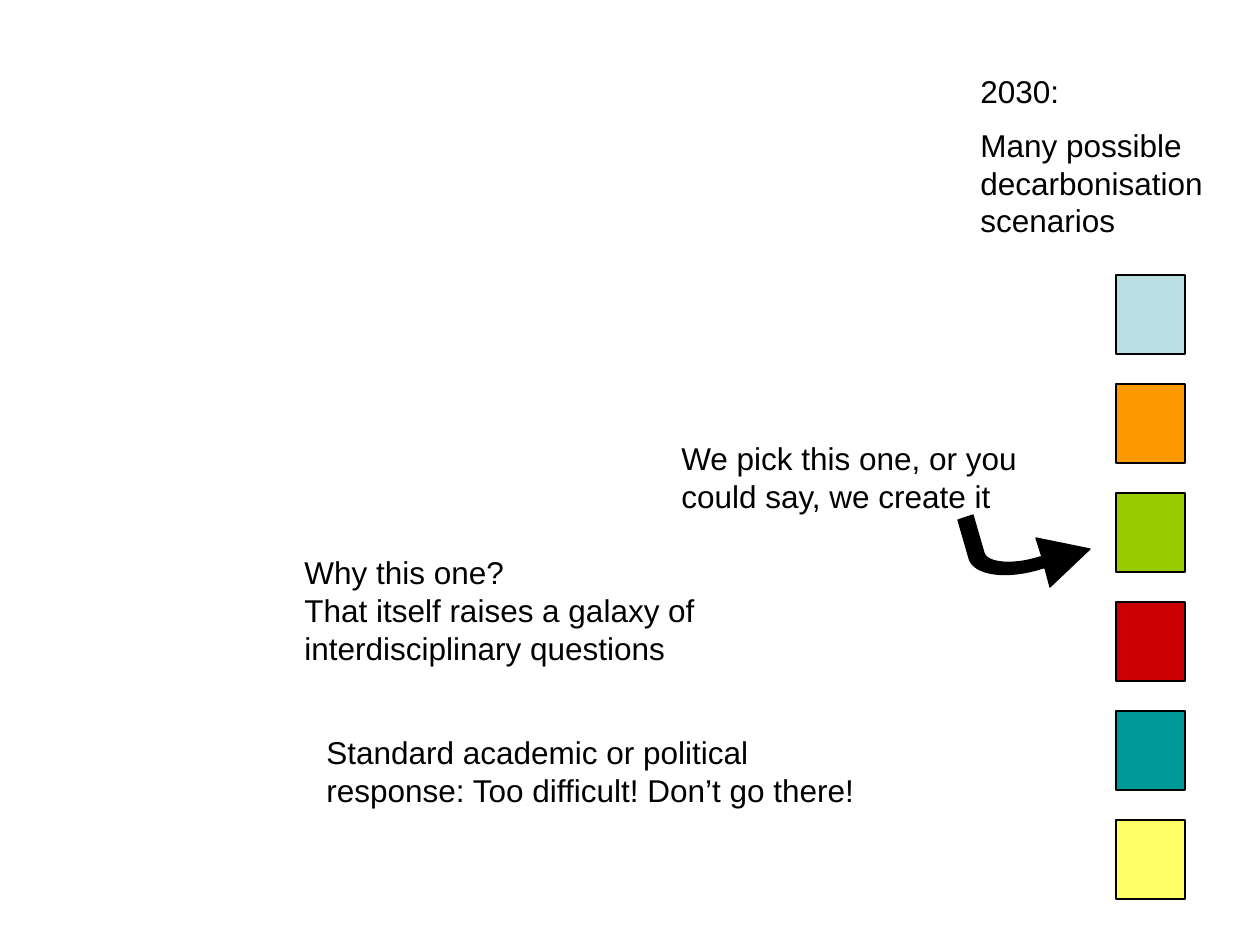
"""Build the slide on choosing one of many 2030 decarbonisation scenarios."""
import pptx
import pptx.dml.color
import pptx.enum.shapes
import pptx.enum.text
import pptx.util

RGBColor = pptx.dml.color.RGBColor
BLACK = RGBColor(0x00, 0x00, 0x00)
PALE_BLUE = RGBColor(0xBB, 0xE0, 0xE3)
ORANGE = RGBColor(0xFF, 0x99, 0x00)
GREEN = RGBColor(0x99, 0xCC, 0x00)
RED = RGBColor(0xCC, 0x00, 0x00)
TEAL = RGBColor(0x00, 0x99, 0x99)
YELLOW = RGBColor(0xFF, 0xFF, 0x66)

SCALE = 914400 / 126
SLIDE_SIZE = (1260, 945)
SCENARIO_COLORS = [PALE_BLUE, ORANGE, GREEN, RED, TEAL, YELLOW]
SCENARIO_BOX = (1116, 275, 69, 79)
SCENARIO_PITCH = 109
CURVE_STEPS = 16
FONT_FORMAT = {"name": "Arial", "size": pptx.util.Pt(18)}
PARAGRAPH_GAP = pptx.util.Pt(9)

TEXTS = [
    ((968, 66, 249, 183), PARAGRAPH_GAP,
     ["2030:", "Many possible decarbonisation scenarios"]),
    ((669, 433, 367, 88), 0,
     ["We pick this one, or you could say, we create it"]),
    ((292, 547, 561, 127), 0,
     ["Why this one?",
      "That itself raises a galaxy of interdisciplinary questions"]),
    ((314, 727, 561, 89), 0,
     ["Standard academic or political response: Too difficult! Don’t go there!"]),
]

ARROW_START = (1090, 549)
ARROW_SEGMENTS = [
    [(1050, 587)], [(1045, 568)], [(1043, 568)],
    [(1007, 580), (973, 575), (969, 558)],
    [(958, 520)], [(973, 515)], [(984, 553)],
    [(987, 563), (1012, 566), (1040, 557)],
    [(1042, 557)], [(1036, 538)],
]


def px(value):
    return round(value * SCALE)


def curve_point(controls, t):
    weights = ((1 - t) ** 3, 3 * t * (1 - t) ** 2, 3 * t * t * (1 - t), t ** 3)
    return tuple(sum(w * point[axis] for w, point in zip(weights, controls))
                 for axis in (0, 1))


def arrow_points():
    points = [ARROW_START]
    for segment in ARROW_SEGMENTS:
        if len(segment) == 1:
            points += segment
        else:
            controls = [points[-1], *segment]
            points += [curve_point(controls, step / CURVE_STEPS)
                       for step in range(1, CURVE_STEPS + 1)]
    return points


def paint(shape, color):
    shape.shadow.inherit = False
    shape.fill.solid()
    shape.fill.fore_color.rgb = color
    shape.line.color.rgb = BLACK
    shape.line.width = pptx.util.Pt(0.75)


def add_scenarios(slide):
    left, top, width, height = SCENARIO_BOX
    for index, color in enumerate(SCENARIO_COLORS):
        box = (left, top + index * SCENARIO_PITCH, width, height)
        shape = slide.shapes.add_shape(
            pptx.enum.shapes.MSO_SHAPE.RECTANGLE, *map(px, box))
        paint(shape, color)


def add_text(slide, box, gap, lines):
    frame = slide.shapes.add_textbox(*map(px, box)).text_frame
    frame.word_wrap = True
    frame.auto_size = pptx.enum.text.MSO_AUTO_SIZE.SHAPE_TO_FIT_TEXT
    for index, line in enumerate(lines):
        paragraph = frame.add_paragraph() if index else frame.paragraphs[0]
        if index and gap:
            paragraph.space_before = gap
        run = paragraph.add_run()
        run.text = line
        for name, value in FONT_FORMAT.items():
            setattr(run.font, name, value)
        run.font.color.rgb = BLACK


def add_arrow(slide):
    start, *rest = [(px(x), px(y)) for x, y in arrow_points()]
    builder = slide.shapes.build_freeform(*start)
    builder.add_line_segments(rest, close=True)
    paint(builder.convert_to_shape(), BLACK)


def main():
    presentation = pptx.Presentation()
    presentation.slide_width, presentation.slide_height = map(px, SLIDE_SIZE)
    slide = presentation.slides.add_slide(presentation.slide_layouts[6])
    add_scenarios(slide)
    for box, gap, lines in TEXTS:
        add_text(slide, box, gap, lines)
    add_arrow(slide)
    presentation.save("out.pptx")


if __name__ == "__main__":
    main()
